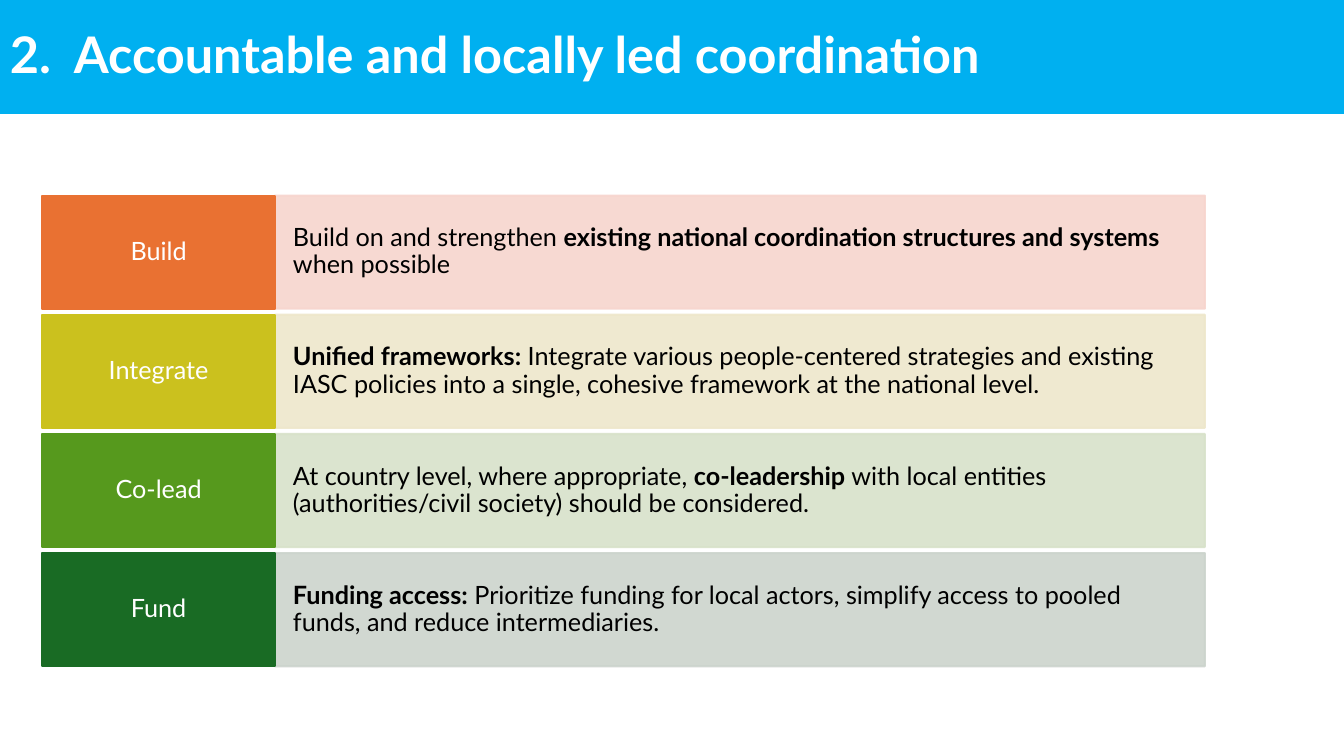
from dataclasses import dataclass

from lxml import etree
from pptx import Presentation
from pptx.dml.color import RGBColor
from pptx.enum.shapes import MSO_SHAPE
from pptx.enum.text import MSO_ANCHOR, PP_ALIGN
from pptx.oxml.ns import qn
from pptx.util import Inches, Pt

RECTANGLE = MSO_SHAPE.RECTANGLE
MIDDLE = MSO_ANCHOR.MIDDLE
LEFT, CENTER = PP_ALIGN.LEFT, PP_ALIGN.CENTER

SLIDE_WIDTH, SLIDE_HEIGHT = 13.33, 7.5
TITLE_BOX = (0, 0, SLIDE_WIDTH, 1.13)
ACTIONS_BOX = (0.42, 1.94, 11.53, 4.67)
LABEL_SHARE = 0.2
ROW_GAP = 0.06


@dataclass(frozen=True)
class Theme:
    font: str = "Lato"
    title_size: int = 36
    body_size: int = 18
    line_width: float = 1.5
    line_spacing: float = 0.9
    band: str = "00B0F0"
    light_text: str = "FFFFFF"
    dark_text: str = "000000"
    tint_opacity: int = 90


THEME = Theme()

TITLE = "2.  Accountable and locally led coordination"

# Label, label colour, tint, then (text, bold) runs
ACTIONS = [
    ("Build", "E97132", "F7D5CE", [
        ("Build on and strengthen ", False),
        ("existing national coordination structures and systems", True),
        (" when possible", False)]),
    ("Integrate", "CBC11E", "EEE7CB", [
        ("Unified frameworks:", True),
        (" Integrate various people-centered strategies and existing IASC "
         "policies into a single, cohesive framework at the national level.", False)]),
    ("Co-lead", "56991D", "D8E2CA", [
        ("At country level, where appropriate, ", False),
        ("co-leadership", True),
        (" with local entities (authorities/civil society) should be considered.", False)]),
    ("Fund", "196B24", "CCD4CD", [
        ("Funding access:", True),
        (" Prioritize funding for local actors, simplify access to pooled "
         "funds, and reduce intermediaries.", False)]),
]


def add_block(slide, box, color, outlined=True, opacity=100):
    """Add a filled rectangle, with an outline of the same colour if wanted."""
    shape = slide.shapes.add_shape(RECTANGLE, *map(Inches, box))
    shape.shadow.inherit = False
    fills = [shape.fill]
    if outlined:
        shape.line.width = Pt(THEME.line_width)
        fills.append(shape.line.fill)
    else:
        shape.line.fill.background()
    for fill in fills:
        fill.solid()
        fill.fore_color.rgb = RGBColor.from_string(color)
    if opacity < 100:
        for color_element in shape.element.spPr.iter(qn("a:srgbClr")):
            alpha = etree.SubElement(color_element, qn("a:alpha"))
            alpha.set("val", str(opacity * 1000))
    return shape


def write_text(shape, runs, size, color, alignment, margins):
    """Write (text, bold) runs; margins are horizontal and vertical."""
    frame = shape.text_frame
    frame.word_wrap = True
    frame.vertical_anchor = MIDDLE
    frame.margin_left = frame.margin_right = Inches(margins[0])
    frame.margin_top = frame.margin_bottom = Inches(margins[1])
    paragraph = frame.paragraphs[0]
    paragraph.alignment = alignment
    paragraph.line_spacing = THEME.line_spacing
    for text, bold in runs:
        run = paragraph.add_run()
        run.text = text
        run.font.name = THEME.font
        run.font.size = Pt(size)
        run.font.bold = bold
        run.font.color.rgb = RGBColor.from_string(color)


def add_title_band(slide, box):
    band = add_block(slide, box, THEME.band, outlined=False)
    write_text(band, [(TITLE, True)], THEME.title_size, THEME.light_text,
               LEFT, (0.1, 0.05))


def add_action_row(slide, box, action):
    left, top, width, height = box
    label, color, tint, runs = action
    label_width = width * LABEL_SHARE
    description = add_block(
        slide, (left + label_width, top, width - label_width, height),
        tint, opacity=THEME.tint_opacity)
    write_text(description, runs, THEME.body_size, THEME.dark_text,
               LEFT, (0.18, 0.28))
    heading = add_block(slide, (left, top, label_width, height), color)
    write_text(heading, [(label, False)], THEME.body_size, THEME.light_text,
               CENTER, (0.12, 0.11))


def add_action_list(slide, box):
    left, top, width, height = box
    pitch = (height + ROW_GAP) / len(ACTIONS)
    for index, action in enumerate(ACTIONS):
        row_box = (left, top + index * pitch, width, pitch - ROW_GAP)
        add_action_row(slide, row_box, action)


def main():
    presentation = Presentation()
    presentation.slide_width = Inches(SLIDE_WIDTH)
    presentation.slide_height = Inches(SLIDE_HEIGHT)
    slide = presentation.slides.add_slide(presentation.slide_layouts[6])
    add_title_band(slide, TITLE_BOX)
    add_action_list(slide, ACTIONS_BOX)
    presentation.save("out.pptx")


if __name__ == "__main__":
    main()
